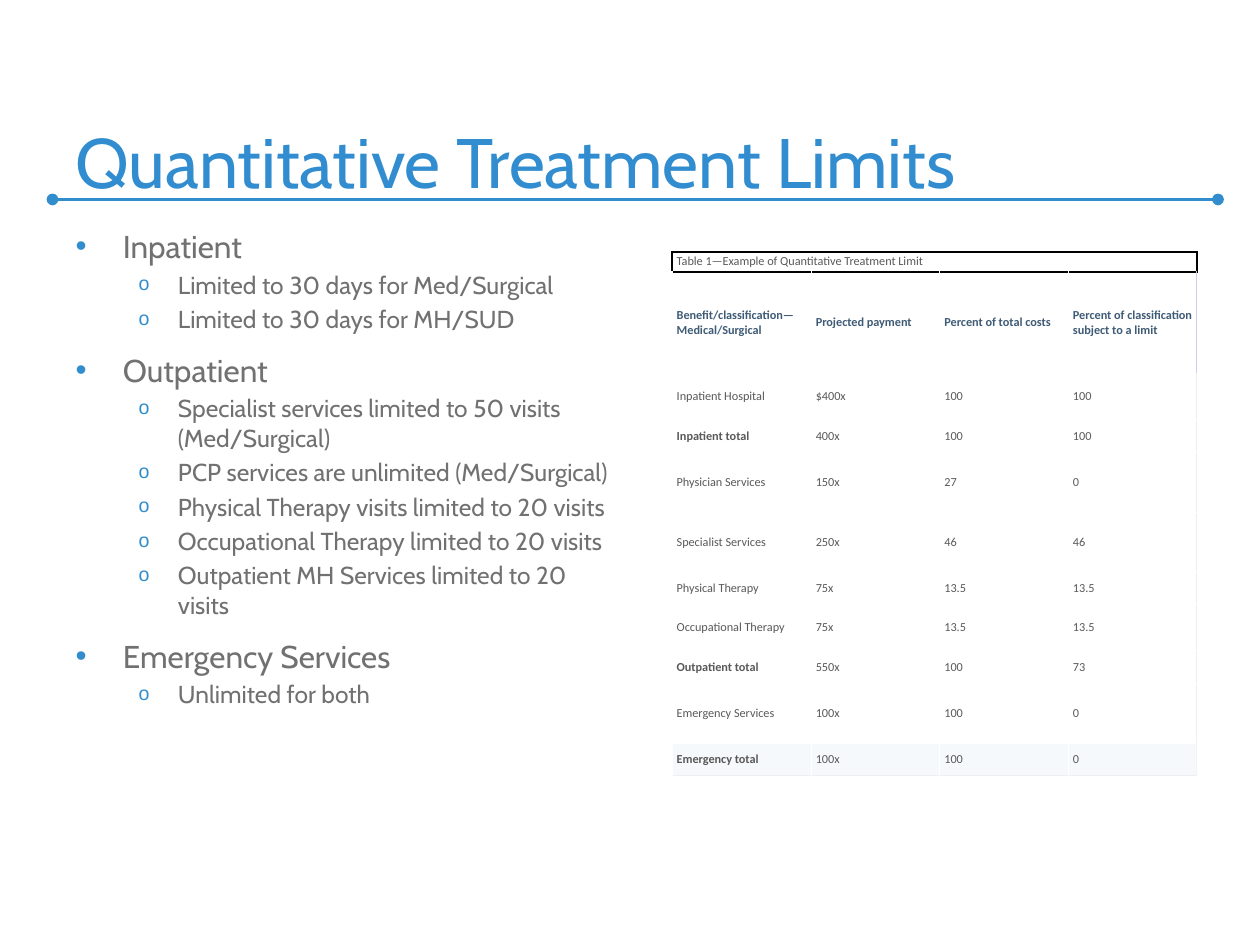
from typing import NamedTuple

import pptx
import pptx.dml.color
import pptx.enum.shapes
import pptx.enum.text
import pptx.oxml.ns
import pptx.util
from lxml import etree

Pt = pptx.util.Pt
qn = pptx.oxml.ns.qn
MIDDLE = pptx.enum.text.MSO_ANCHOR.MIDDLE

HUES = {
    "title": "318DCF", "accent": "318DCC", "body": "717171",
    "cell": "595959", "head": "3F5B75", "band": "F6F9FB",
    "white": "FFFFFF", "black": "000000", "edge": "EEEEEE", "lilac": "CDCDEF",
    "mist": "FDFEFE", "frost": "EFF4F8",
}


class Level(NamedTuple):
    size: float
    left: float
    hang: float
    gap: float
    mark: str
    scale: int


class Row(NamedTuple):
    height: float
    cells: tuple[str, ...]


LEVELS = (Level(18, 27, 27, 10, "•", 100), Level(14, 58.5, 22.5, 2.8, "o", 80))

TOPICS = {
    "Inpatient": (
        "Limited to 30 days for Med/Surgical",
        "Limited to 30 days for MH/SUD",
    ),
    "Outpatient": (
        "Specialist services limited to 50 visits (Med/Surgical)",
        "PCP services are unlimited (Med/Surgical)",
        "Physical Therapy visits limited to 20 visits",
        "Occupational Therapy limited to 20 visits",
        "Outpatient MH Services limited to 20 visits",
    ),
    "Emergency Services": ("Unlimited for both",),
}

WIDTHS = (79.5, 73.5, 73.5, 73.5)
ROWS = (
    Row(6.5, ("Table 1—Example of Quantitative Treatment Limit", "", "", "")),
    Row(58.3, ("Benefit/classification—Medical/Surgical", "Projected payment",
               "Percent of total costs",
               "Percent of classification subject to a limit")),
    Row(26.4, ("Inpatient Hospital", "$400x", "100", "100")),
    Row(18.5, ("Inpatient total", "400x", "100", "100")),
    Row(34.3, ("Physician Services", "150x", "27", "0")),
    Row(34.3, ("Specialist Services", "250x", "46", "46")),
    Row(18.5, ("Physical Therapy", "75x", "13.5", "13.5")),
    Row(26.4, ("Occupational Therapy", "75x", "13.5", "13.5")),
    Row(18.5, ("Outpatient total", "550x", "100", "73")),
    Row(34.3, ("Emergency Services", "100x", "100", "0")),
    Row(18.5, ("Emergency total", "100x", "100", "0")),
)


def rgb(hue: str) -> pptx.dml.color.RGBColor:
    return pptx.dml.color.RGBColor.from_string(HUES[hue])


def write(par, text: str, *, size: float, hue: str, font: str = "Cabin",
          bold: bool = False) -> None:
    par.alignment = pptx.enum.text.PP_ALIGN.LEFT
    run = par.add_run()
    run.text = text
    run.font.size = Pt(size)
    run.font.name = font
    run.font.bold = bold
    run.font.color.rgb = rgb(hue)


def place(shape, left: float, top: float, width: float, height: float) -> None:
    shape.left, shape.top = Pt(left), Pt(top)
    shape.width, shape.height = Pt(width), Pt(height)
    shape.text_frame.word_wrap = True
    shape.text_frame.auto_size = pptx.enum.text.MSO_AUTO_SIZE.NONE


def paint(node, hue: str) -> None:
    etree.SubElement(node, qn("a:srgbClr"), val=HUES[hue])


def mark(par, level: Level) -> None:
    """Give a paragraph its bullet and hanging indent."""
    props = par._p.get_or_add_pPr()
    props.set("marL", str(Pt(level.left)))
    props.set("indent", str(-Pt(level.hang)))
    paint(etree.SubElement(props, qn("a:buClr")), "accent")
    etree.SubElement(props, qn("a:buSzPct"), val=str(level.scale * 1000))
    etree.SubElement(props, qn("a:buChar"), char=level.mark)


def fill_list(frame) -> None:
    lines = [(depth, text) for topic, points in TOPICS.items()
             for depth, text in [(0, topic), *((1, point) for point in points)]]
    for spot, (depth, text) in enumerate(lines):
        par = frame.add_paragraph() if spot else frame.paragraphs[0]
        level = LEVELS[depth]
        par.level = depth
        mark(par, level)
        par.space_before = Pt(level.gap if spot else 0)
        write(par, text, size=level.size, hue="body")


def edge(cell, **hues: str) -> None:
    """Set the borders L, R, T and B of a cell."""
    props = cell._tc.get_or_add_tcPr()
    for spot, side in enumerate("LRTB"):
        hue = hues[side]
        width = 1.5 if hue == "black" and side != "B" else 0.75
        line = etree.Element(qn(f"a:ln{side}"), w=str(Pt(width)))
        paint(etree.SubElement(line, qn("a:solidFill")), hue)
        props.insert(spot, line)


def borders(row: int, col: int) -> dict[str, str]:
    last, end = row == len(ROWS) - 1, col == len(WIDTHS) - 1
    if row == 0:
        return dict.fromkeys("LRTB", "black")
    side = "mist" if last else "white"
    right = "frost" if last else "lilac" if row == 1 else "edge"
    return {"L": side, "R": right if end else side,
            "T": "white", "B": "edge" if last else "white"} | (
                {"T": "black"} if row == 1 else {})


def draw_table(slide) -> None:
    frame = slide.shapes.add_table(
        len(ROWS), len(WIDTHS), Pt(384), Pt(144), Pt(sum(WIDTHS)),
        Pt(sum(row.height for row in ROWS)))
    table = frame.table
    table.first_row = table.horz_banding = False
    for col, width in enumerate(WIDTHS):
        table.columns[col].width = Pt(width)
    for spot, row in enumerate(ROWS):
        table.rows[spot].height = Pt(row.height)
        for col, text in enumerate(row.cells):
            cell = table.cell(spot, col)
            cell.vertical_anchor = MIDDLE
            cell.margin_left = cell.margin_right = Pt(2.7)
            cell.margin_top = cell.margin_bottom = Pt(1.35)
            if spot == len(ROWS) - 1:
                cell.fill.solid()
                cell.fill.fore_color.rgb = rgb("band")
            else:
                cell.fill.background()
            edge(cell, **borders(spot, col))
            head = spot == 1
            total = col == 0 and text.endswith("total")
            if text:
                write(cell.text_frame.paragraphs[0], text, size=7,
                      hue="head" if head else "cell", font="Calibri",
                      bold=head or total)
    table.cell(0, 0).merge(table.cell(0, len(WIDTHS) - 1))


def draw_rule(slide) -> None:
    """Draw the line with round ends under the title."""
    rule = slide.shapes.add_connector(
        pptx.enum.shapes.MSO_CONNECTOR.STRAIGHT,
        Pt(30), Pt(114), Pt(696), Pt(114))
    rule.line.width = Pt(2.25)
    rule.line.color.rgb = rgb("accent")
    props = rule.element.spPr
    for end in ("a:headEnd", "a:tailEnd"):
        etree.SubElement(props.find(qn("a:ln")), qn(end), type="oval")
    etree.SubElement(props, qn("a:effectLst"))


def main() -> None:
    deck = pptx.Presentation()
    deck.slide_width, deck.slide_height = Pt(720), Pt(540)
    slide = deck.slides.add_slide(deck.slide_layouts[1])
    draw_rule(slide)
    title, body = slide.shapes.title, slide.placeholders[1]
    place(body, 36, 126, 324, 344)
    fill_list(body.text_frame)
    draw_table(slide)
    place(title, 36, 24, 654, 95.5)
    title.text_frame.vertical_anchor = pptx.enum.text.MSO_ANCHOR.BOTTOM
    write(title.text_frame.paragraphs[0], "Quantitative Treatment Limits",
          size=40, hue="title")
    deck.save("out.pptx")


if __name__ == "__main__":
    main()
